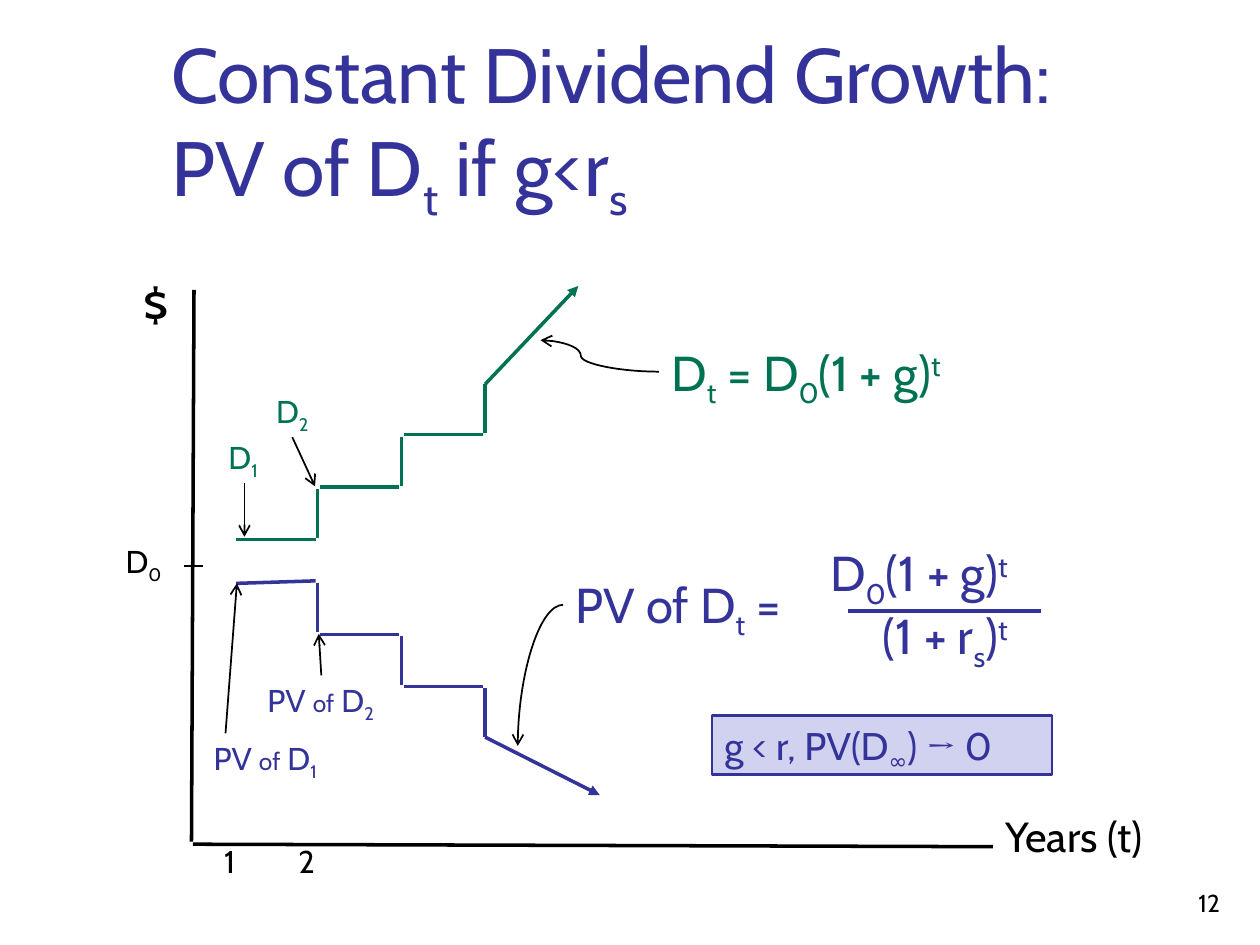
from lxml import etree
from pptx import Presentation
from pptx.dml.color import RGBColor
from pptx.enum import shapes, text
from pptx.oxml import ns
from pptx.util import Inches, Pt

BLUE = RGBColor(0x33, 0x33, 0x99)
GREEN = RGBColor(0x00, 0x72, 0x54)
BLACK = RGBColor(0, 0, 0)
PALE = RGBColor(0xD1, 0xD1, 0xF0)
LEFT, MID, RIGHT = text.PP_ALIGN.LEFT, text.PP_ALIGN.CENTER, text.PP_ALIGN.RIGHT
TOP, LOW = text.MSO_ANCHOR.TOP, text.MSO_ANCHOR.BOTTOM
LINE, CURVE = shapes.MSO_CONNECTOR.STRAIGHT, shapes.MSO_CONNECTOR.CURVE


def style(run, size, color):
    """Format a run; the marks _ ^ ~ @ mean sub, super, small and symbol."""
    mark = run.text[0]
    font = run.font
    font.name, font.size, font.color.rgb = "Cabin", Pt(size), color
    if mark not in "_^~@":
        return
    run.text = run.text[1:]
    if mark == "~":
        font.size = Pt(14)
    elif mark == "@":
        font.name = "Cambria"
    else:
        base = "-25000" if mark == "_" else "30000"
        run._r.get_or_add_rPr().set("baseline", base)


def fill(frame, words, size=18, color=BLACK, align=LEFT, anchor=TOP, wrap=True):
    """Write words, with runs split by bars, into a text frame."""
    frame.word_wrap, frame.vertical_anchor = wrap, anchor
    para = frame.paragraphs[0]
    para.alignment = align
    for row, part in enumerate(words.split("\n")):
        if row:
            para.add_line_break()
        for piece in part.split("|"):
            run = para.add_run()
            run.text = piece
            style(run, size, color)


def label(slide, x, y, w, h, words, **form):
    """Add a text box."""
    box = slide.shapes.add_textbox(Inches(x), Inches(y), Inches(w), Inches(h))
    fill(box.text_frame, words, **form)


def line(slide, start, end, color=BLACK, width=1, head=None, kind=LINE):
    """Add a connector, with an arrowhead if one is named."""
    ends = [Inches(n) for n in (*start, *end)]
    link = slide.shapes.add_connector(kind, *ends)
    link.line.color.rgb, link.line.width = color, Pt(width)
    if head:
        tip = etree.SubElement(link.line._get_or_add_ln(), ns.qn("a:tailEnd"))
        tip.set("type", head)
    etree.SubElement(link._element.spPr, ns.qn("a:effectLst"))
    return link


def title(slide, x, y, w, h):
    """Place the slide title."""
    label(slide, x, y, w, h, "Constant Dividend Growth:\nPV of D|_t| if g<r|_s",
          size=44, color=BLUE, anchor=LOW)


def axes(slide, x, y, w, h):
    """Place both axes with their names and ticks."""
    line(slide, (x + 0.02, y), (x, y + h - 0.04), width=2)
    line(slide, (x + 0.01, y + h - 0.02), (x + w, y + h), width=2)
    line(slide, (x - 0.06, y + 2.19), (x + 0.09, y + 2.19))
    label(slide, x - 0.48, y - 0.17, 0.41, 0.57, "$", size=28, wrap=False)
    label(slide, x + w, y + h - 0.34, 1.48, 0.5, "Years (t)", size=24, wrap=False)
    label(slide, x - 0.66, y + 1.95, 0.52, 0.4, "D|_0", align=RIGHT)
    for i, year in enumerate("12"):
        label(slide, x + 0.16 + 0.59 * i, y + h - 0.09, 0.32, 0.4, year)


def stairs(slide, x, y, w, h, color, way, tilt=0):
    """Place three steps that rise (way -1) or fall (way 1) to an arrow."""
    base = y if way > 0 else y + h
    for i in range(3):
        edge, tread = x + 0.64 + 0.665 * i, base + way * 0.415 * i
        lean = 0 if i else tilt
        line(slide, (edge - 0.645, tread + lean), (edge - 0.015, tread - lean), color, 2)
        line(slide, (edge, tread + way * 0.01), (edge, tread + way * 0.4), color, 2)
    line(slide, (edge, base + way * 1.23), (x + w, base + way * h), color, 2, "triangle")


def growth(slide, x, y, w, h):
    """Place the dividend formula and its curved pointer."""
    label(slide, x + 0.94, y - 0.03, w - 0.94, h, "D|_t| = D|_0|(1 + g)|^t",
          size=28, color=GREEN)
    bend = line(slide, (x + 0.94, y + 0.25), (x, y), head="arrow", kind=CURVE)
    rule = bend._element.spPr.find(ns.qn("a:prstGeom")).find(ns.qn("a:avLst"))
    etree.SubElement(rule, ns.qn("a:gd"), name="adj1", fmla="val 65900")


def value(slide, x, y, w, h):
    """Place the present value fraction and its curved pointer."""
    form = dict(size=28, color=BLUE)
    label(slide, x + 0.36, y + 0.25, 2.08, 0.57, "PV of D|_t| =", **form)
    label(slide, x + 2.38, y, 2.12, 0.57, "D|_0|(1 + g)|^t", **form)
    label(slide, x + 2.8, y + 0.5, 1.64, 0.57, "(1 + r|_s|)|^t", **form)
    line(slide, (x + 2.62, y + 0.59), (x + w, y + 0.59), BLUE, 2.5)
    bend = line(slide, (x + 0.36, y + 0.54), (x, y + h), head="arrow", kind=CURVE)
    bend._element.spPr.find(ns.qn("a:prstGeom")).set("prst", "curvedConnector2")


def limit(slide, x, y, w, h):
    """Place the boxed limit statement."""
    box = slide.shapes.add_shape(shapes.MSO_SHAPE.RECTANGLE, Inches(x), Inches(y),
                                 Inches(w), Inches(h))
    box.shadow.inherit = False
    box.fill.solid()
    box.fill.fore_color.rgb = PALE
    box.line.color.rgb, box.line.width = BLUE, Pt(1.5)
    fill(box.text_frame, "g < r, PV(D|_∞|) |@→| 0", size=22, color=BLUE)


def note(slide, x, y, w, h, words, color, start, end):
    """Place a step name and the arrow to its step."""
    label(slide, x, y, w, h, words, color=color, align=MID)
    line(slide, (x + start[0], y + start[1]), (x + end[0], y + end[1]), head="arrow")


def main():
    """Build and save the slide."""
    deck = Presentation()
    deck.slide_width, deck.slide_height = Inches(10), Inches(7.5)
    slide = deck.slides.add_slide(deck.slide_layouts[6])
    label(slide, 7.7, 6.83, 2.08, 0.5, "12", size=14, align=RIGHT, anchor=LOW)
    title(slide, 1.26, 0.23, 8.52, 1.6)
    axes(slide, 1.52, 2.3, 6.36, 4.42)
    stairs(slide, 1.88, 2.27, 2.71, 2.01, GREEN, -1)
    stairs(slide, 1.88, 4.62, 2.88, 1.69, BLUE, 1, tilt=0.01)
    growth(slide, 4.29, 2.7, 4.44, 0.57)
    value(slide, 4.11, 4.26, 4.15, 1.66)
    limit(slide, 5.65, 5.68, 2.7, 0.47)
    note(slide, 1.61, 3.43, 0.64, 0.4, "D|_1", GREEN, (0.33, 0.4), (0.33, 0.83))
    note(slide, 2, 3.06, 0.64, 0.4, "D|_2", GREEN, (0.32, 0.41), (0.5, 0.8))
    note(slide, 1.55, 5.82, 1.11, 0.4, "PV |~of| D|_1", BLUE, (0.24, 0), (0.33, -1.19))
    note(slide, 1.99, 5.36, 1.11, 0.4, "PV |~of| D|_2", BLUE, (0.56, 0), (0.54, -0.33))
    deck.save("out.pptx")


if __name__ == "__main__":
    main()
